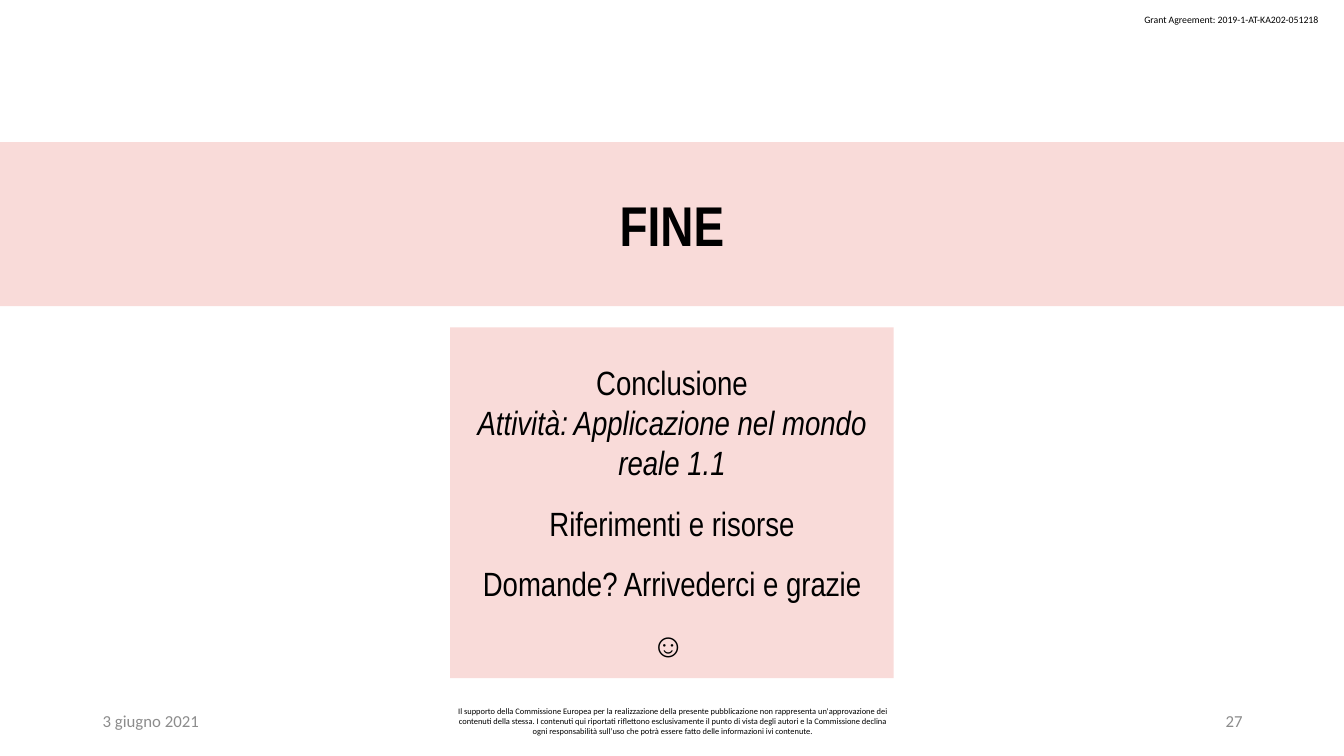
from dataclasses import dataclass

from pptx import Presentation
from pptx.dml.color import RGBColor
from pptx.enum.shapes import MSO_SHAPE as Shape
from pptx.enum.text import MSO_ANCHOR as Anchor, MSO_AUTO_SIZE as AutoSize, PP_ALIGN as Align
from pptx.util import Inches, Pt

WIDTH, HEIGHT = 13.33, 7.5
LEFT, CENTER, RIGHT = Align.LEFT, Align.CENTER, Align.RIGHT
GRANT = "Grant Agreement: 2019-1-AT-KA202-051218"
DATE = "3 giugno 2021"
PAGE = "27"
DISCLAIMER = (
    "Il supporto della Commissione Europea per la realizzazione della presente pubblicazione "
    "non rappresenta un'approvazione dei contenuti della stessa. I contenuti qui riportati "
    "riflettono esclusivamente il punto di vista degli autori e la Commissione declina ogni "
    "responsabilità sull’uso che potrà essere fatto delle informazioni ivi contenute."
)
CLOSING = [
    ("Conclusione", 1.5, False),
    ("Attività: Applicazione nel mondo reale 1.1", 1.0, True),
    ("Riferimenti e risorse", 1.5, False),
    ("Domande? Arrivederci e grazie ☺ ", 1.5, False),
]


@dataclass(frozen=True)
class Theme:
    """Colours, fonts and type sizes of the slide."""
    panel: str = "F9DBD9"
    ink: str = "000000"
    muted: str = "8C8C8C"
    heading_font: str = "Arial Narrow"
    small_font: str = "Calibri"
    title_size: int = 40
    body_size: int = 24
    footer_size: int = 12
    grant_size: int = 7
    disclaimer_size: int = 6


THEME = Theme()


def share(left, top, width, height):
    """Turn shares of the slide into a box of lengths."""
    return (Inches(left * WIDTH), Inches(top * HEIGHT),
            Inches(width * WIDTH), Inches(height * HEIGHT))


def apply(target, values):
    """Set attributes from a dict of format values."""
    for name, value in values.items():
        setattr(target, name, value)


def write(paragraph, text, size, font, color=THEME.ink, align=CENTER, spacing=1.0,
          bold=False, italic=False):
    """Fill one paragraph with formatted text."""
    apply(paragraph, {"alignment": align, "line_spacing": spacing})
    run = paragraph.add_run()
    run.text = text
    apply(run.font, {"size": Pt(size), "name": font, "bold": bold, "italic": italic})
    run.font.color.rgb = RGBColor.from_string(color)


def format_panel(shape):
    """Give a shape the pink panel fill and inner margins."""
    shape.fill.solid()
    shape.fill.fore_color.rgb = RGBColor.from_string(THEME.panel)
    shape.line.fill.background()
    apply(shape.text_frame, {
        "word_wrap": True, "auto_size": AutoSize.NONE, "vertical_anchor": Anchor.MIDDLE,
        "margin_left": Inches(0.13), "margin_right": Inches(0.13),
        "margin_top": Inches(0.07), "margin_bottom": Inches(0.07)})


def add_title_band(slide, box):
    """Stretch the title placeholder into a full-width band."""
    title = slide.shapes.title
    apply(title, dict(zip(("left", "top", "width", "height"), box)))
    format_panel(title)
    write(title.text_frame.paragraphs[0], "FINE", THEME.title_size, THEME.heading_font, bold=True)


def add_closing_panel(slide, box):
    """Draw the panel with the closing points."""
    panel = slide.shapes.add_shape(Shape.RECTANGLE, *box)
    panel.shadow.inherit = False
    format_panel(panel)
    frame = panel.text_frame
    for index, (text, spacing, italic) in enumerate(CLOSING):
        paragraph = frame.add_paragraph() if index else frame.paragraphs[0]
        write(paragraph, text, THEME.body_size, THEME.heading_font,
              spacing=spacing, italic=italic)


def add_note(slide, box, text, size, color, align, wrap=True):
    """Place a small text in its box."""
    frame = slide.shapes.add_textbox(*box).text_frame
    apply(frame, {"word_wrap": wrap, "vertical_anchor": Anchor.MIDDLE})
    write(frame.paragraphs[0], text, size, THEME.small_font, color, align)


def add_footer(slide, box):
    """Set date, disclaimer and page number along the footer box."""
    left, top, width, height = box
    side, middle = Inches(3), Inches(4.5)
    notes = [
        (left, side, DATE, THEME.footer_size, THEME.muted, LEFT),
        (left + (width - middle) // 2, middle, DISCLAIMER, THEME.disclaimer_size, THEME.ink, CENTER),
        (left + width - side, side, PAGE, THEME.footer_size, THEME.muted, RIGHT),
    ]
    for start, span, *content in notes:
        add_note(slide, (start, top, span, height), *content)


def build_end_slide(presentation):
    """Add the closing slide."""
    slide = presentation.slides.add_slide(presentation.slide_layouts[5])
    add_note(slide, share(0.844, 0.011, 0.148, 0.029), GRANT,
             THEME.grant_size, THEME.ink, LEFT, wrap=False)
    add_footer(slide, share(0.069, 0.927, 0.863, 0.053))
    add_title_band(slide, share(0, 0.188, 1, 0.217))
    add_closing_panel(slide, share(0.335, 0.433, 0.33, 0.464))


def main():
    """Build and save the presentation."""
    presentation = Presentation()
    apply(presentation, {"slide_width": Inches(WIDTH), "slide_height": Inches(HEIGHT)})
    build_end_slide(presentation)
    presentation.save("out.pptx")


if __name__ == "__main__":
    main()
